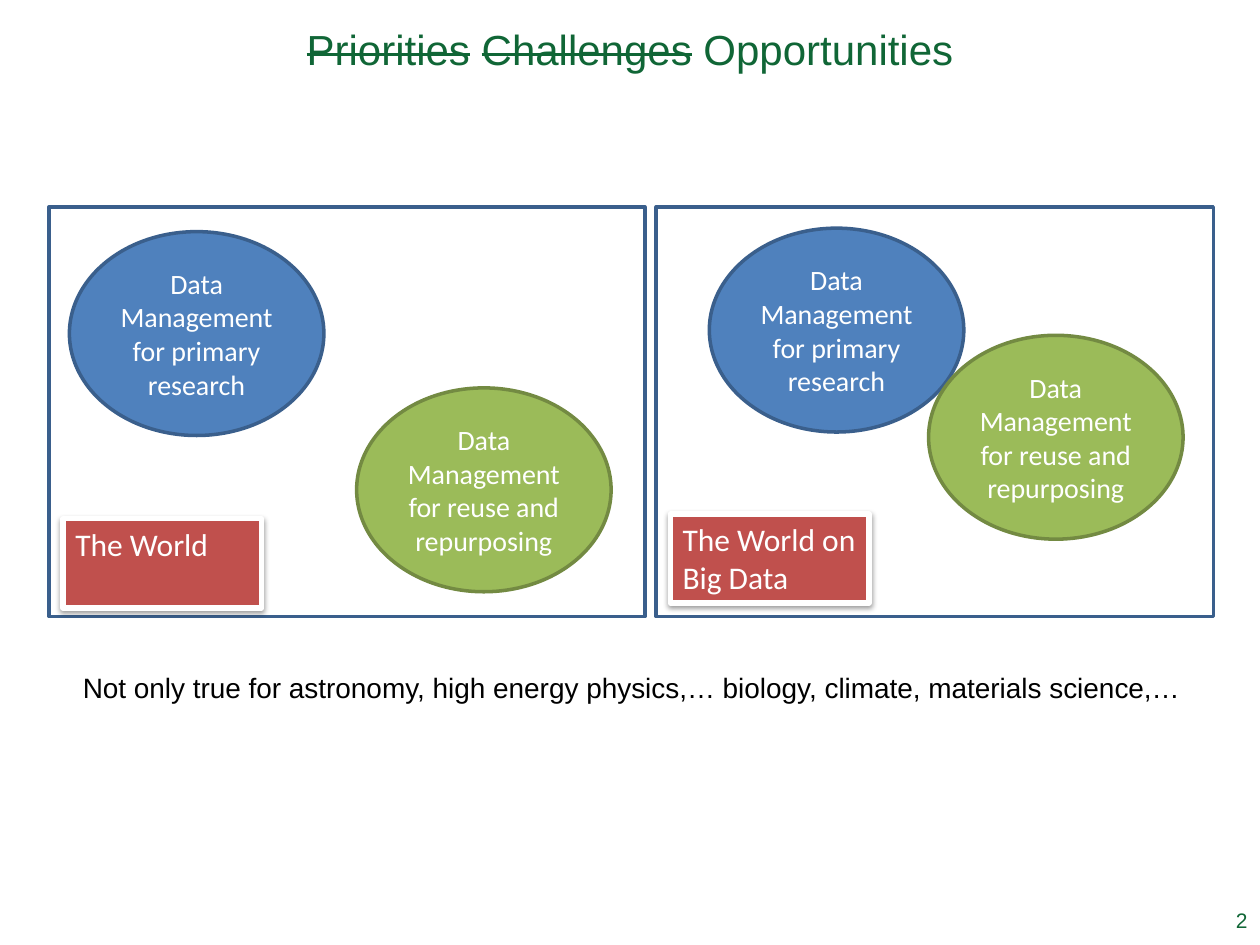
from lxml import etree
from pptx import Presentation
from pptx.dml.color import RGBColor
from pptx.enum import shapes, text
from pptx.oxml import ns
from pptx.util import Cm, Pt

GREEN = "106636"
WHITE = "FFFFFF"
NAVY = "3A5F8C"


def tint(code):
    return RGBColor.from_string(code)


class Deck:
    body = "Arial"
    label = "Calibri"

    def __init__(self, show):
        self.slide = show.slides.add_slide(show.slide_layouts[5])

    def place(self, item, box):
        item.left, item.top, item.width, item.height = map(Cm, box)

    def letter(self, item, runs, font, size, color, align, anchor, wrap=True):
        frame = item.text_frame
        frame.word_wrap = wrap
        frame.vertical_anchor = anchor
        line = frame.paragraphs[0]
        line.alignment = align
        for words, struck in runs:
            run = line.add_run()
            run.text = words
            run.font.name = font
            run.font.size = Pt(size)
            run.font.color.rgb = tint(color)
            if struck:
                run.font._element.set("strike", "sngStrike")

    def title(self, box, runs):
        item = self.slide.shapes.title
        self.place(item, box)
        self.letter(item, runs, self.body, 24, GREEN,
                    text.PP_ALIGN.CENTER, text.MSO_ANCHOR.MIDDLE)

    def note(self, box, words, size, color, align, anchor, wrap):
        item = self.slide.shapes.add_textbox(*map(Cm, box))
        self.letter(item, [(words, False)], self.body, size, color,
                    align, anchor, wrap)

    def shape(self, kind, box, fill, edge, width):
        item = self.slide.shapes.add_shape(kind, *map(Cm, box))
        item.shadow.inherit = False
        if fill:
            item.fill.solid()
            item.fill.fore_color.rgb = tint(fill)
        else:
            item.fill.background()
        item.line.color.rgb = tint(edge)
        item.line.width = Pt(width)
        return item

    def oval(self, left, top, words, fill, edge):
        item = self.shape(shapes.MSO_SHAPE.OVAL, (left, top, 5.13, 4.11),
                          fill, edge, 2)
        self.letter(item, [(words, False)], self.label, 16, WHITE,
                    text.PP_ALIGN.CENTER, text.MSO_ANCHOR.MIDDLE)

    def panel(self, left, width):
        self.shape(shapes.MSO_SHAPE.RECTANGLE, (left, 4.17, width, 8.26),
                   None, NAVY, 2)

    def tag(self, left, top, words):
        item = self.shape(shapes.MSO_SHAPE.RECTANGLE, (left, top, 4.01, 1.8),
                          "C0504D", WHITE, 3)
        self.letter(item, [(words, False)], self.label, 18, WHITE,
                    text.PP_ALIGN.LEFT, text.MSO_ANCHOR.TOP)
        self.shade(item)

    def shade(self, item):
        group = item._element.spPr.find(ns.qn("a:effectLst"))
        outer = etree.SubElement(
            group, ns.qn("a:outerShdw"), blurRad=str(Pt(3.1)),
            dist=str(Pt(1.6)), dir="5400000", rotWithShape="0")
        color = etree.SubElement(outer, ns.qn("a:srgbClr"), val="000000")
        etree.SubElement(color, ns.qn("a:alpha"), val="38000")


def main():
    show = Presentation()
    show.slide_width, show.slide_height = Cm(25.4), Cm(19.05)
    deck = Deck(show)
    deck.title((0, -0.61, 25.4, 3.18),
               [("Priorities", True), (" ", False),
                ("Challenges", True), (" Opportunities", False)])
    deck.note((24.33, 18.03, 1.07, 1.02), "2", 12, GREEN,
              text.PP_ALIGN.RIGHT, text.MSO_ANCHOR.MIDDLE, True)

    first = ("Data Management for primary research", "4F81BD", NAVY)
    reuse = ("Data Management for reuse and repurposing", "9BBB59", "738A42")
    for left, top, look in ((1.4, 4.67, first), (7.19, 7.82, reuse),
                            (14.3, 4.6, first), (18.72, 6.76, reuse)):
        deck.oval(left, top, *look)

    for left, width in ((0.99, 12.01), (13.23, 11.23)):
        deck.panel(left, width)
    deck.tag(13.51, 10.36, "The World on Big Data")
    deck.tag(1.27, 10.46, "The World")
    deck.note((1.42, 13.39, 23.06, 0.94),
              "Not only true for astronomy, high energy physics,… "
              "biology, climate, materials science,…",
              16, "000000", text.PP_ALIGN.LEFT, text.MSO_ANCHOR.TOP, False)
    show.save("out.pptx")


if __name__ == "__main__":
    main()
